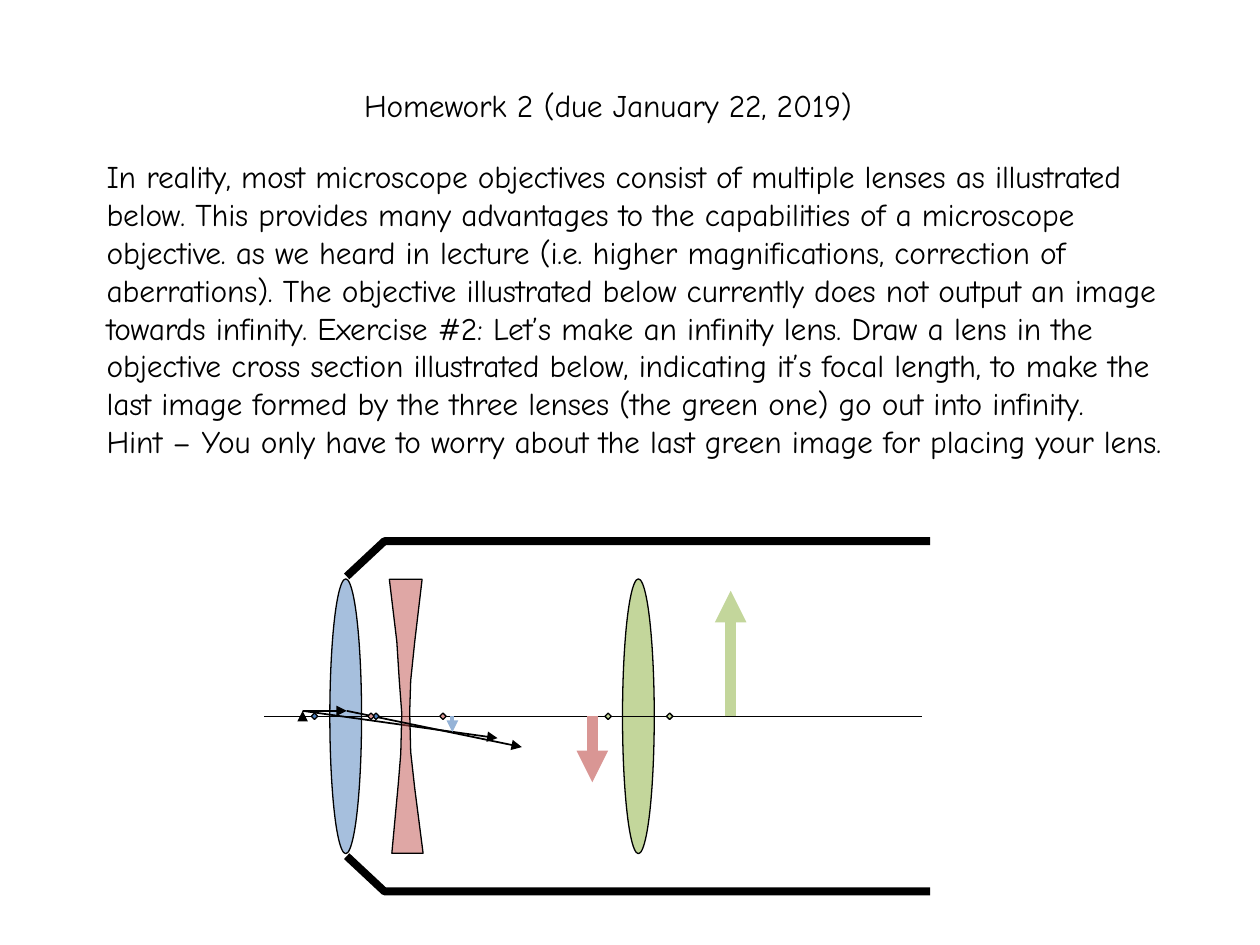
from lxml import etree
from pptx import Presentation
from pptx.dml.color import RGBColor
from pptx.enum.shapes import MSO_CONNECTOR, MSO_SHAPE
from pptx.oxml.ns import qn
from pptx.util import Cm, Pt

ELLIPSE, DIAMOND = MSO_SHAPE.OVAL, MSO_SHAPE.DIAMOND
STRAIGHT = MSO_CONNECTOR.STRAIGHT

# Content (lengths in cm)
TITLE = [[("Homework ", -10), ("2 ", 0), ("(due January 22, 2019)", -10)]]
EXERCISE = [
    [("In reality, most microscope objectives consist of multiple lenses as "
      "illustrated below. This provides many advantages to the capabilities of "
      "a microscope objective. as we heard in lecture (i.e. higher "
      "magnifications, correction of aberrations). The objective illustrated "
      "below currently does not output an image towards infinity. Exercise #2: "
      "Let’s make an infinity lens. Draw a lens in the objective cross section "
      "illustrated below, indicating it’s focal length, to make the last image "
      "formed by the three lenses (the green one) go out into infinity.", -10)],
    [("Hint – You only have to worry about the last green image for placing "
      "your lens.", -10)],
]
BLACK, BLUE, RED, GREEN = "000000", "4F81BD", "C0504D", "C3D69B"
LIGHT_BLUE, LIGHT_RED = "95B3D7", "D99694"

AXIS_Y, AXIS_START, AXIS_END = 14.44, 5.33, 18.59
LENS_WIDTH, LENS_HEIGHT, FOCUS_SIZE = 0.64, 5.54, 0.13
CONVEX_LENSES = [(12.87, GREEN, None), (6.97, BLUE, 50)]  # centre, fill, opacity
CONCAVE_LENS = [
    (7.92, 17.2), (8.53, 17.2), (8.36, 15.88), (8.28, 15.16), (8.26, 14.35),
    (8.28, 13.72), (8.36, 12.95), (8.51, 11.68), (7.85, 11.68), (8, 12.93),
    (8.05, 13.72), (8.1, 14.38), (8.08, 15.19), (8.03, 15.8), (7.9, 17.2),
]
FOCAL_POINTS = [(6.34, BLUE), (7.58, BLUE), (12.26, GREEN), (13.5, GREEN),
                (7.48, LIGHT_RED), (8.93, LIGHT_RED)]
# Arrows: start, end, colour, width in points
OBJECT_TIP, LENS_HIT = (6.1, 14.33), (6.99, 14.33)
BACK_ARROWS = [
    ((6.1, 14.43), OBJECT_TIP, BLACK, 1.5),
    (OBJECT_TIP, (10.03, 14.88), BLACK, 1),
]
FRONT_ARROWS = [
    ((9.12, AXIS_Y), (9.12, 14.76), LIGHT_BLUE, 2.25),
    (OBJECT_TIP, LENS_HIT, BLACK, 1),
    (LENS_HIT, (10.52, 15.06), BLACK, 1),
    ((11.94, AXIS_Y), (11.94, 15.77), LIGHT_RED, 6),
    ((14.73, AXIS_Y), (14.73, 11.91), GREEN, 6),
]
BARREL = [(6.99, 2.82), (7.75, 3.53), (18.75, 3.53)]  # x, distance from axis


def rgb(value):
    return RGBColor.from_string(value)


def add_text(paragraphs, left, top, width, height, size=18, font="Comic Neue",
             color=BLACK, space_before=0):
    frame = slide.shapes.add_textbox(Cm(left), Cm(top), Cm(width),
                                     Cm(height)).text_frame
    frame.word_wrap = True
    for index, pieces in enumerate(paragraphs):
        paragraph = frame.paragraphs[0] if index == 0 else frame.add_paragraph()
        paragraph.space_before = Pt(space_before if index else 0)
        for words, spacing in pieces:
            run = paragraph.add_run()
            run.text = words
            run.font.size, run.font.name = Pt(size), font
            run.font.color.rgb = rgb(color)
            run.font._element.set("spc", str(spacing))


def style(shape, fill=None, opacity=None, width=0.75):
    shape.shadow.inherit = False
    shape.line.color.rgb, shape.line.width = rgb(BLACK), Pt(width)
    if fill is None:
        shape.fill.background()
        return
    shape.fill.solid()
    shape.fill.fore_color.rgb = rgb(fill)
    if opacity:
        color = shape._element.spPr.find(qn("a:solidFill"))[0]
        etree.SubElement(color, qn("a:alpha"), val=str(opacity * 1000))


def add_on_axis(kind, center, width, height, fill, opacity=None):
    shape = slide.shapes.add_shape(kind, Cm(center - width / 2),
                                   Cm(AXIS_Y - height / 2), Cm(width), Cm(height))
    style(shape, fill, opacity)


def add_outline(points, close=False, **look):
    start, *rest = [(Cm(x), Cm(y)) for x, y in points]
    builder = slide.shapes.build_freeform(*start)
    builder.add_line_segments(rest, close=close)
    style(builder.convert_to_shape(), **look)


def add_line(start, end, color=BLACK, width=0.75, arrow=True):
    line = slide.shapes.add_connector(STRAIGHT, *map(Cm, start + end))
    line.line.color.rgb, line.line.width = rgb(color), Pt(width)
    if arrow:
        etree.SubElement(line.line._get_or_add_ln(), qn("a:tailEnd"),
                         type="triangle")
    etree.SubElement(line._element.spPr, qn("a:effectLst"))


presentation = Presentation()
presentation.slide_width, presentation.slide_height = Cm(25.4), Cm(19.05)
slide = presentation.slides.add_slide(presentation.slide_layouts[6])

# Wording
add_text(EXERCISE, 1.9, 3.05, 22.15, 7.95, space_before=0.1)
add_text(TITLE, 7.09, 1.6, 11.25, 1.02)

# Lenses, optical axis and rays
for center, fill, opacity in CONVEX_LENSES:
    add_on_axis(ELLIPSE, center, LENS_WIDTH, LENS_HEIGHT, fill, opacity)
add_line((AXIS_START, AXIS_Y), (AXIS_END, AXIS_Y), arrow=False)
for arrow in BACK_ARROWS:
    add_line(*arrow)
add_outline(CONCAVE_LENS, close=True, fill=RED, opacity=50)
for arrow in FRONT_ARROWS:
    add_line(*arrow)
for center, fill in FOCAL_POINTS:
    add_on_axis(DIAMOND, center, FOCUS_SIZE, FOCUS_SIZE, fill)

# Objective barrel, mirrored about the axis
for side in (-1, 1):
    add_outline([(x, AXIS_Y + side * offset) for x, offset in BARREL], width=4.5)

presentation.save("out.pptx")
